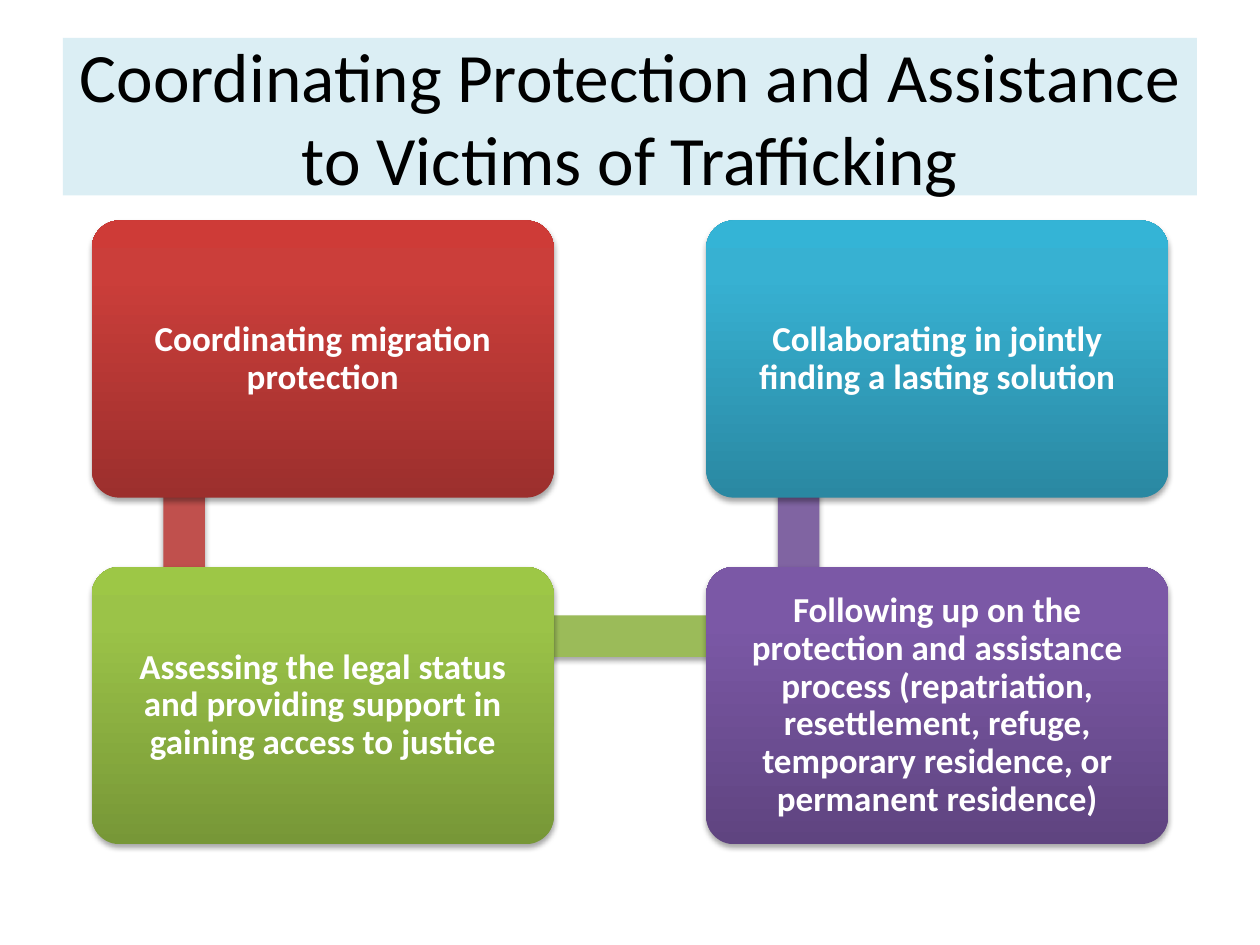
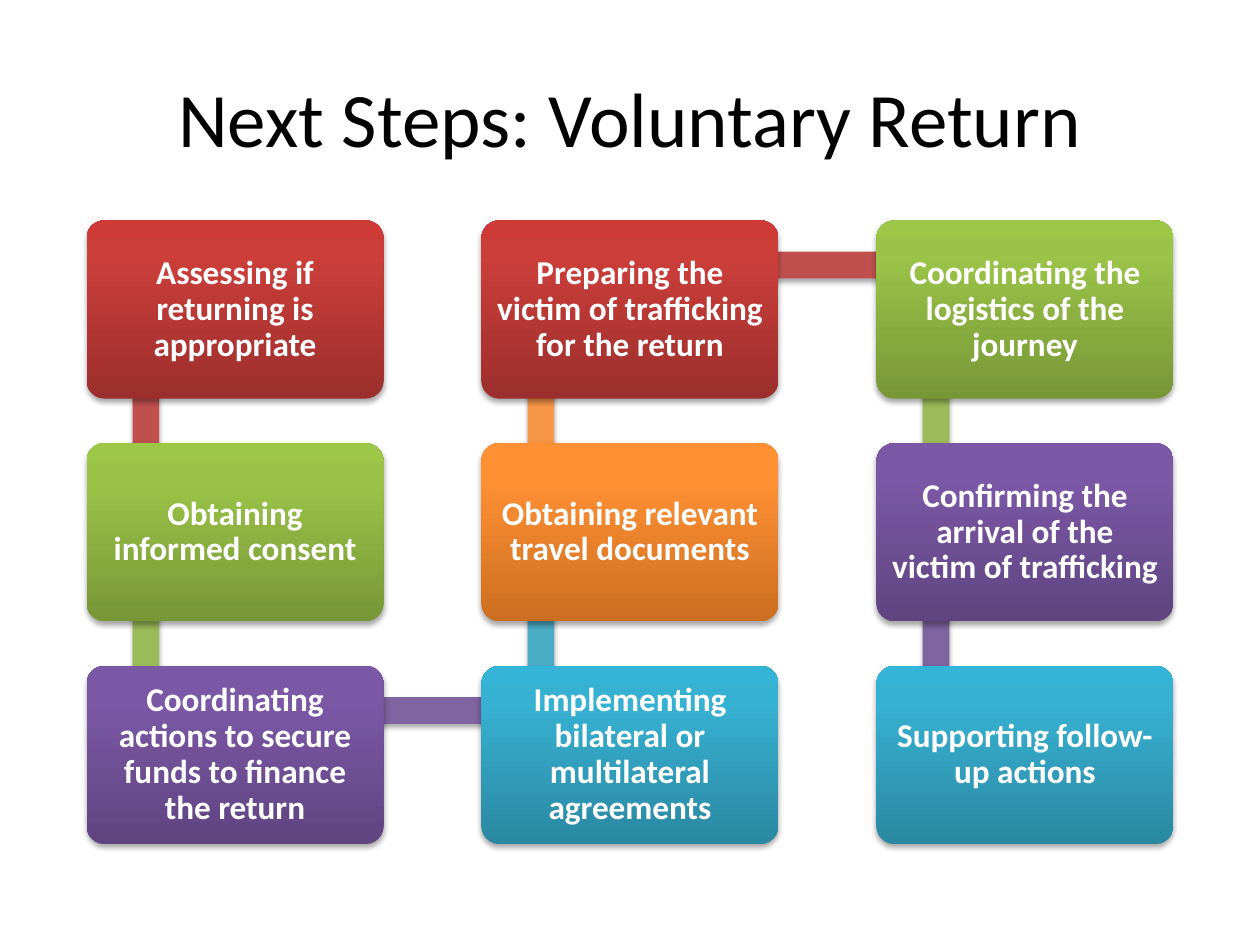
import math
from dataclasses import dataclass
from typing import Optional

import lxml.etree
import pptx
import pptx.dml.color
import pptx.enum.shapes
import pptx.enum.text
import pptx.oxml.ns
import pptx.util
from copy import deepcopy

SLIDE_WIDTH = pptx.util.Inches(10)
SLIDE_HEIGHT = pptx.util.Inches(7.5)
UNIT = SLIDE_HEIGHT / 30  # the slide is a grid of 40 columns by 30 rows

FONT = "Calibri"
COLORS = {
    "text": "000000",
    "card_text": "FFFFFF",
    "title_band": "DBEEF4",
    "shadow": "000000",
    "red": "C0504D",
    "green": "9BBB59",
    "purple": "8064A2",
    "blue": "4BACC6",
    "orange": "F79646",
}
# Card gradients from the bottom edge to the top edge
GRADIENTS = {
    "red": ("9C2F2D", "CB3E3A", "CE3B37"),
    "green": ("779737", "9BC348", "9DC746"),
    "purple": ("5F4480", "7B58A6", "7C57A8"),
    "blue": ("2A88A2", "37B1D2", "34B4D6"),
    "orange": ("CC6E20", "FF9034", "FF9136"),
}
GRADIENT_POSITIONS = (0, 0.8, 1)

# Title box and flow area, in grid units
TITLE_BOX = (2, 1.2, 36, 5)
FLOW_TOP = 7
FLOW_HEIGHT = 19.8

# Proportions of the flow, as shares of a card's width
CARD_HEIGHT = 0.6
COLUMN_PITCH = 1.33
ROW_PITCH = 0.75
BAR_THICKNESS = 0.09
BAR_ANCHOR = (0.2, 0.15)


@dataclass(frozen=True)
class Step:
    text: str
    color: str


@dataclass(frozen=True)
class FlowSlide:
    title: str
    title_size: float
    title_fill: Optional[str]
    rows: int
    step_size: float
    steps: tuple[Step, ...]


FLOW_SLIDES = (
    FlowSlide(
        "Coordinating Protection and Assistance to Victims of Trafficking",
        39.6, "title_band", 2, 20,
        (
            Step("Coordinating migration protection", "red"),
            Step("Assessing the legal status and providing support in "
                 "gaining access to justice", "green"),
            Step("Following up on the protection and assistance process "
                 "(repatriation, resettlement, refuge, temporary residence, "
                 "or permanent residence)", "purple"),
            Step("Collaborating in jointly finding a lasting solution", "blue"),
        ),
    ),
    FlowSlide(
        "Next Steps: Voluntary Return", 44, None, 3, 19,
        (
            Step("Assessing if returning is appropriate", "red"),
            Step("Obtaining informed consent", "green"),
            Step("Coordinating actions to secure funds to finance the return",
                 "purple"),
            Step("Implementing bilateral or multilateral agreements", "blue"),
            Step("Obtaining relevant travel documents", "orange"),
            Step("Preparing the victim of trafficking for the return", "red"),
            Step("Coordinating the logistics of the journey", "green"),
            Step("Confirming the arrival of the victim of trafficking", "purple"),
            Step("Supporting follow-up actions", "blue"),
        ),
    ),
)


def rgb(value: str) -> pptx.dml.color.RGBColor:
    return pptx.dml.color.RGBColor.from_string(value)


def box(left: float, top: float, width: float, height: float) -> list[int]:
    """Turn grid units into slide lengths."""
    return [round(length * UNIT) for length in (left, top, width, height)]


def write_text(shape, text: str, *, size: float, color: str, bold: bool = False,
               line_spacing: float = 1.0, inset: Optional[float] = None) -> None:
    frame = shape.text_frame
    frame.word_wrap = True
    frame.auto_size = pptx.enum.text.MSO_AUTO_SIZE.NONE
    frame.vertical_anchor = pptx.enum.text.MSO_ANCHOR.MIDDLE
    if inset is not None:
        frame.margin_left = frame.margin_right = pptx.util.Inches(inset)
        frame.margin_top = frame.margin_bottom = pptx.util.Inches(inset)
    paragraph = frame.paragraphs[0]
    paragraph.alignment = pptx.enum.text.PP_ALIGN.CENTER
    paragraph.line_spacing = line_spacing
    run = paragraph.add_run()
    run.text = text
    run.font.name = FONT
    run.font.size = pptx.util.Pt(size)
    run.font.bold = bold
    run.font.color.rgb = rgb(COLORS[color])


def add_soft_shadow(shape) -> None:
    shape.shadow.inherit = False
    qn = pptx.oxml.ns.qn
    effects = shape._element.spPr.find(qn("a:effectLst"))
    shadow = lxml.etree.SubElement(
        effects, qn("a:outerShdw"), blurRad="40000", dist="23000",
        dir="5400000", rotWithShape="0")
    color = lxml.etree.SubElement(shadow, qn("a:srgbClr"), val=COLORS["shadow"])
    lxml.etree.SubElement(color, qn("a:alpha"), val="35000")


def fill_gradient(shape, colors: tuple[str, ...]) -> None:
    """Fill the shape with a three-stop gradient that runs upwards."""
    shape.fill.gradient()
    shape.fill.gradient_angle = 90
    stop_list = shape._element.spPr.find(".//" + pptx.oxml.ns.qn("a:gsLst"))
    stop_list.append(deepcopy(stop_list[-1]))
    for stop, position, color in zip(
            shape.fill.gradient_stops, GRADIENT_POSITIONS, colors):
        stop.position = position
        stop.color.rgb = rgb(color)


def add_flow_shape(slide, kind, left: float, top: float,
                   width: float, height: float):
    """Add a borderless shape with the shadow of the flow."""
    shape = slide.shapes.add_shape(kind, *box(left, top, width, height))
    shape.line.fill.background()
    add_soft_shadow(shape)
    return shape


def add_bar(slide, start: tuple[float, float], end: tuple[float, float],
            thickness: float, color: str) -> None:
    """Add a thick bar from start to end, turned in the direction of the flow."""
    length = math.dist(start, end)
    center_x, center_y = ((a + b) / 2 for a, b in zip(start, end))
    bar = add_flow_shape(
        slide, pptx.enum.shapes.MSO_SHAPE.RECTANGLE,
        center_x - length / 2, center_y - thickness / 2, length, thickness)
    bar.rotation = math.degrees(
        math.atan2(end[1] - start[1], end[0] - start[0])) % 360
    bar.fill.solid()
    bar.fill.fore_color.rgb = rgb(COLORS[color])


def add_card(slide, step: Step, left: float, top: float, width: float,
             size: float) -> None:
    card = add_flow_shape(
        slide, pptx.enum.shapes.MSO_SHAPE.ROUNDED_RECTANGLE,
        left, top, width, width * CARD_HEIGHT)
    card.adjustments[0] = 0.1
    fill_gradient(card, GRADIENTS[step.color])
    write_text(card, step.text, size=size, color="card_text", bold=True,
               line_spacing=0.9, inset=0.08)


def add_title(slide, flow: FlowSlide) -> None:
    title = slide.shapes.add_textbox(*box(*TITLE_BOX))
    if flow.title_fill:
        title.fill.solid()
        title.fill.fore_color.rgb = rgb(COLORS[flow.title_fill])
    write_text(title, flow.title, size=flow.title_size, color="text")


def add_flow(slide, flow: FlowSlide) -> None:
    """Lay the steps out in columns that run down and up in turn."""
    columns = math.ceil(len(flow.steps) / flow.rows)
    width = FLOW_HEIGHT / (CARD_HEIGHT + ROW_PITCH * (flow.rows - 1))
    flow_width = width * (1 + COLUMN_PITCH * (columns - 1))
    flow_left = (SLIDE_WIDTH / UNIT - flow_width) / 2

    corners = []
    for index in range(len(flow.steps)):
        column, row = divmod(index, flow.rows)
        if column % 2:
            row = flow.rows - 1 - row
        corners.append((flow_left + column * COLUMN_PITCH * width,
                        FLOW_TOP + row * ROW_PITCH * width))
    anchors = [(left + BAR_ANCHOR[0] * width, top + BAR_ANCHOR[1] * width)
               for left, top in corners]

    for index, (step, corner) in enumerate(zip(flow.steps, corners)):
        if index + 1 < len(anchors):
            add_bar(slide, anchors[index], anchors[index + 1],
                    BAR_THICKNESS * width, step.color)
        add_card(slide, step, *corner, width, flow.step_size)


def main() -> None:
    presentation = pptx.Presentation()
    presentation.slide_width = SLIDE_WIDTH
    presentation.slide_height = SLIDE_HEIGHT
    for flow in FLOW_SLIDES:
        slide = presentation.slides.add_slide(presentation.slide_layouts[6])
        add_title(slide, flow)
        add_flow(slide, flow)
    presentation.save("out.pptx")


if __name__ == "__main__":
    main()
